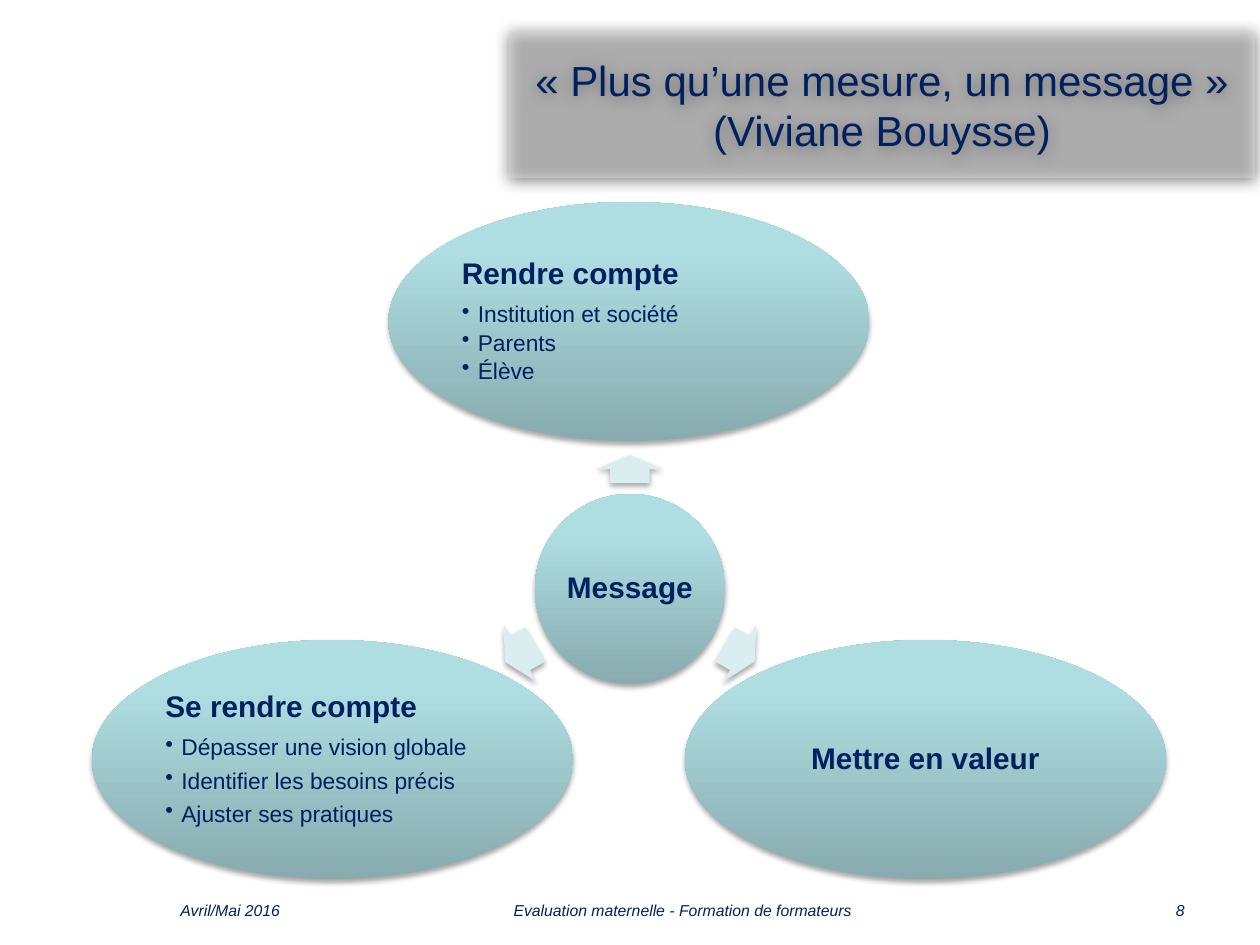
import copy
import pptx
import pptx.dml.color
import pptx.enum.shapes
import pptx.enum.text
import pptx.oxml
import pptx.oxml.ns
import pptx.util

RGBColor = pptx.dml.color.RGBColor
SHAPES = pptx.enum.shapes.MSO_SHAPE
ALIGN = pptx.enum.text.PP_ALIGN
ANCHOR = pptx.enum.text.MSO_ANCHOR
Pt = pptx.util.Pt
qn = pptx.oxml.ns.qn

SCALE = 914400 / 126
NAVY = RGBColor(0x00, 0x20, 0x60)
TEAL_DARK = RGBColor(0x87, 0xAB, 0xAE)
TEAL = RGBColor(0xAF, 0xDE, 0xE2)
TEAL_LIGHT = RGBColor(0xAF, 0xE0, 0xE4)
PALE = RGBColor(0xDA, 0xED, 0xEF)
GREY = RGBColor(0xD9, 0xD9, 0xD9)


def px(length):
    return round(length * SCALE)


def place(box):
    return [px(length) for length in box]


def element(xml):
    namespace = pptx.oxml.ns.nsdecls("a")
    return pptx.oxml.parse_xml(xml.replace(" ", f" {namespace} ", 1))


def add_shadow(shape, alpha, blur, distance):
    shape.shadow.inherit = False
    effects = shape.element.spPr.find(qn("a:effectLst"))
    effects.append(element(
        f'<a:outerShdw blurRad="{Pt(blur)}" dist="{Pt(distance)}" dir="5400000" rotWithShape="0">'
        f'<a:srgbClr val="000000"><a:alpha val="{alpha * 1000}"/></a:srgbClr></a:outerShdw>'))


def add_span(para, text, size, bold=False, italic=False):
    span = para.add_run()
    span.text = text
    span.font.name = "Arial"
    span.font.size = Pt(size)
    span.font.bold = bold
    span.font.italic = italic
    span.font.color.rgb = NAVY


def add_bubble(page, box, heading, bullets=(), bullet_gap=0):
    bubble = page.shapes.add_shape(SHAPES.OVAL, *place(box))
    bubble.line.fill.background()
    add_shadow(bubble, 35, 3.1, 1.8)
    bubble.fill.gradient()
    bubble.fill.gradient_angle = 90
    stop_list = bubble.element.spPr.find(qn("a:gradFill")).find(qn("a:gsLst"))
    stop_list.append(copy.deepcopy(stop_list[-1]))
    colors = (TEAL_DARK, TEAL, TEAL_LIGHT)
    for stop, position, color in zip(bubble.fill.gradient_stops, (0, 0.8, 1), colors):
        stop.position = position
        stop.color.rgb = color

    frame = bubble.text_frame
    frame.word_wrap = True
    frame.vertical_anchor = ANCHOR.MIDDLE
    frame.margin_left = frame.margin_right = px(3)
    frame.margin_top = frame.margin_bottom = px(3)
    para = frame.paragraphs[0]
    para.alignment = ALIGN.LEFT if bullets else ALIGN.CENTER
    para.line_spacing = 0.9
    para.space_after = Pt(7)
    add_span(para, heading, 17, bold=True)
    for bullet in bullets:
        para = frame.add_paragraph()
        para.level = 1
        para.alignment = ALIGN.LEFT
        para.line_spacing = 0.9
        para.space_after = Pt(bullet_gap)
        properties = para._p.get_or_add_pPr()
        properties.set("marL", str(px(16)))
        properties.set("indent", str(px(-16)))
        properties.append(element('<a:buChar char="•"/>'))
        add_span(para, bullet, 13)


def add_arrow(page, center_x, center_y, length, angle):
    width = 66
    box = (center_x - length / 2, center_y - width / 2, length, width)
    arrow = page.shapes.add_shape(SHAPES.RIGHT_ARROW, *place(box))
    arrow.adjustments[0] = 0.6
    arrow.adjustments[1] = 0.5
    arrow.rotation = angle
    arrow.fill.solid()
    arrow.fill.fore_color.rgb = PALE
    arrow.line.fill.background()
    add_shadow(arrow, 35, 3.1, 1.8)


def add_diagram(page, box):
    left, top, width, height = box
    bubble_width, bubble_height, hub = 481, 239, 190
    middle = left + width / 2
    low = top + height - bubble_height
    add_bubble(page, (middle - hub / 2 + 1, top + 292, hub, hub), "Message")
    add_arrow(page, middle + 1, top + 267, 28, 270)
    add_bubble(page, (middle - bubble_width / 2, top, bubble_width, bubble_height),
               "Rendre compte", ("Institution et société", "Parents", "Élève"), 2)
    add_arrow(page, middle + 111, top + 451, 34, 30)
    add_bubble(page, (left + width - bubble_width, low, bubble_width, bubble_height),
               "Mettre en valeur")
    add_arrow(page, middle - 109, top + 451, 35, 150)
    add_bubble(page, (left, low, bubble_width, bubble_height), "Se rendre compte",
               ("Dépasser une vision globale", "Identifier les besoins précis",
                "Ajuster ses pratiques"), 5)


def add_footer(page, box):
    left, top, width, height = box
    parts = (
        (0, 294, ALIGN.LEFT, "Avril/Mai 2016"),
        (315, 399, ALIGN.CENTER, "Evaluation maternelle - Formation de formateurs"),
        (width - 294, 294, ALIGN.RIGHT, "8"),
    )
    for offset, part_width, alignment, text in parts:
        label = page.shapes.add_textbox(*place((left + offset, top, part_width, height)))
        frame = label.text_frame
        frame.word_wrap = True
        frame.vertical_anchor = ANCHOR.BOTTOM
        para = frame.paragraphs[0]
        para.alignment = alignment
        add_span(para, text, 9, italic=True)


def add_title(page, box):
    title = page.shapes.add_shape(SHAPES.RECTANGLE, *place(box))
    title.fill.solid()
    title.fill.fore_color.rgb = GREY
    color = title.element.spPr.find(qn("a:solidFill"))[0]
    color.append(element('<a:alpha val="50000"/>'))
    title.line.fill.background()
    add_shadow(title, 100, 8.5, 1)
    frame = title.text_frame
    frame.word_wrap = True
    frame.vertical_anchor = ANCHOR.MIDDLE
    para = frame.paragraphs[0]
    para.alignment = ALIGN.CENTER
    add_span(para, "« Plus qu’une mesure, un message »", 24)
    para.add_line_break()
    add_span(para, "(Viviane Bouysse)", 24)


def main():
    deck = pptx.Presentation()
    deck.slide_width = px(1260)
    deck.slide_height = px(945)
    page = deck.slides.add_slide(deck.slide_layouts[6])
    add_diagram(page, (92, 202, 1074, 677))
    add_footer(page, (168, 881, 1029, 45))
    add_title(page, (509, 31, 746, 147))
    deck.save("out.pptx")


if __name__ == "__main__":
    main()
